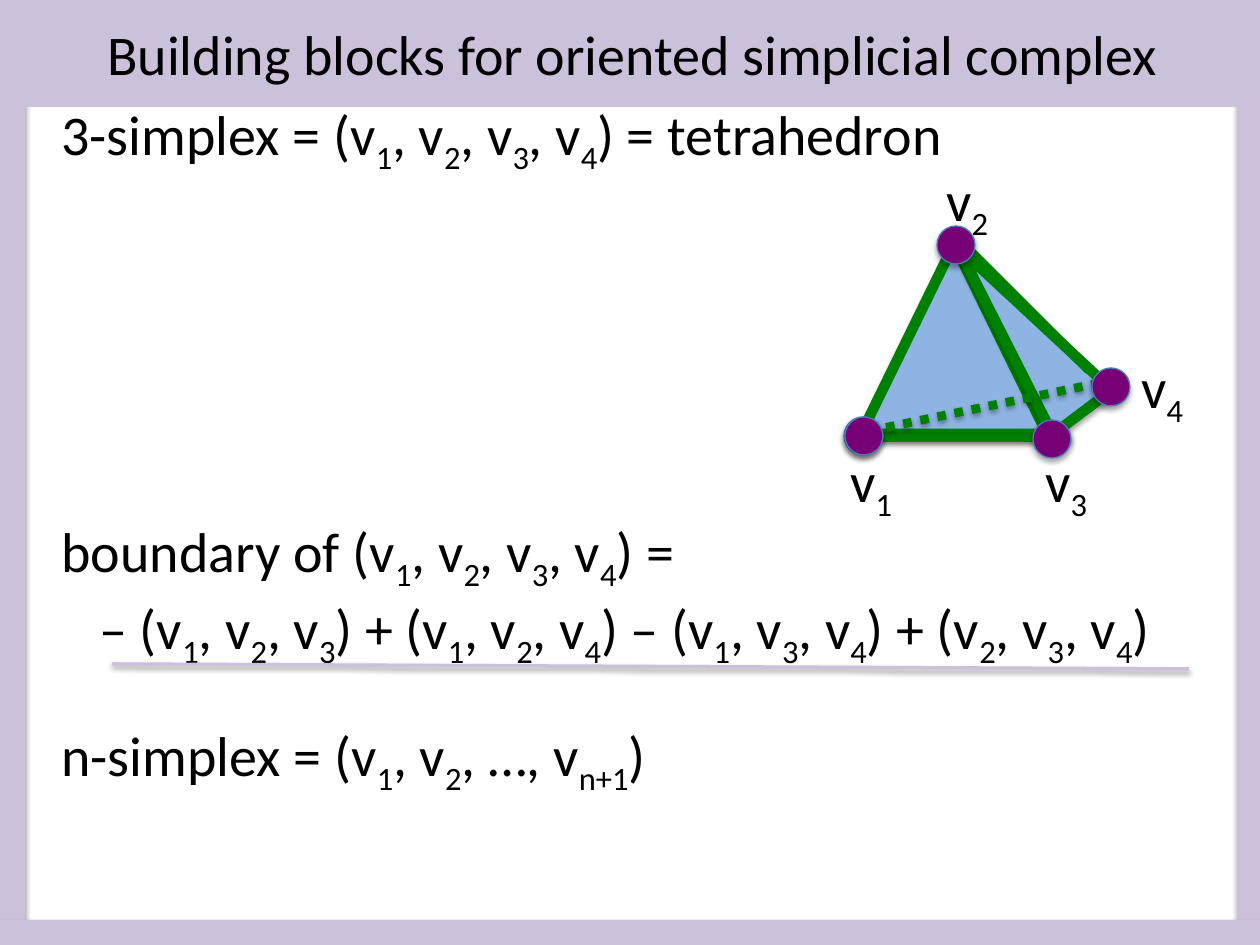
from dataclasses import dataclass
from typing import Optional

from lxml.etree import SubElement
from pptx import Presentation
from pptx.dml.color import RGBColor
from pptx.enum.dml import MSO_LINE_DASH_STYLE as Dash
from pptx.enum.shapes import MSO_CONNECTOR as Connector, MSO_SHAPE as Preset
from pptx.enum.text import MSO_ANCHOR as Anchor, MSO_AUTO_SIZE as AutoSize, PP_ALIGN as Align
from pptx.oxml.ns import qn
from pptx.util import Pt

EMU_PER_PX = 914400 / 126
BLACK = RGBColor(0x00, 0x00, 0x00)
LILAC = RGBColor(0xCC, 0xC1, 0xDA)
FACE_BLUE = RGBColor(0x8E, 0xB4, 0xE3)
EDGE_GREEN = RGBColor(0x00, 0x80, 0x00)
VERTEX_PURPLE = RGBColor(0x77, 0x00, 0x77)
VERTEX_RIM = RGBColor(0x4B, 0x7E, 0xBC)
FONT = "Calibri"
FONT_SIZE = 32
VERTEX_SIZE = 38
LABEL_SIZE = (89, 81)


@dataclass
class Block:
    """A filled preset shape, in px, with an optional outline in points."""
    box: tuple[int, int, int, int]
    fill: RGBColor
    preset: Preset = Preset.RECTANGLE
    rotation: int = 0
    outline: Optional[RGBColor] = None
    weight: float = 0
    shadow: bool = True


@dataclass
class Edge:
    """A straight line between two points in px."""
    start: tuple[int, int]
    end: tuple[int, int]
    weight: float
    color: RGBColor = EDGE_GREEN
    dash: Optional[Dash] = None
    shadow: bool = True


@dataclass
class Statement:
    """A line of text whose subscripts stand between underscores."""
    text: str
    space_before: int = 0
    indent: int = 0


def px(length: int) -> int:
    """Turn px into EMU."""
    return round(length * EMU_PER_PX)


def simplex(*indices: str) -> str:
    """Write an oriented simplex with subscripted vertices."""
    return "(" + ", ".join(f"v_{index}_" for index in indices) + ")"


def cast_shadow(effects, distance: float, opacity: int) -> None:
    """Add a soft downward shadow to an effect list."""
    outer = SubElement(effects, qn("a:outerShdw"), blurRad=str(Pt(3.1)), dist=str(Pt(distance)),
                       dir="5400000", rotWithShape="0")
    tone = SubElement(outer, qn("a:srgbClr"), val=str(BLACK))
    SubElement(tone, qn("a:alpha"), val=str(opacity * 1000))


def draw_block(slide, block: Block):
    """Draw a preset shape and return it."""
    shape = slide.shapes.add_shape(block.preset, *map(px, block.box))
    shape.rotation = block.rotation
    shape.fill.solid()
    shape.fill.fore_color.rgb = block.fill
    if block.outline is None:
        shape.line.fill.background()
    else:
        shape.line.color.rgb = block.outline
        shape.line.width = Pt(block.weight)
    shape.shadow.inherit = False
    if block.shadow:
        cast_shadow(shape._element.spPr.find(qn("a:effectLst")), 1.8, 35)
    return shape


def draw_edge(slide, edge: Edge) -> None:
    """Draw a straight connector."""
    connector = slide.shapes.add_connector(Connector.STRAIGHT, *map(px, edge.start + edge.end))
    connector.line.color.rgb = edge.color
    connector.line.width = Pt(edge.weight)
    if edge.dash is not None:
        connector.line.dash_style = edge.dash
    effects = SubElement(connector._element.spPr, qn("a:effectLst"))
    if edge.shadow:
        cast_shadow(effects, 1.6, 38)


def write_statement(paragraph, statement: Statement) -> None:
    """Fill a paragraph, lowering every second piece as a subscript."""
    paragraph.space_before = Pt(statement.space_before)
    if statement.indent:
        paragraph._p.get_or_add_pPr().set("marL", str(px(statement.indent)))
    for position, piece in enumerate(statement.text.split("_")):
        run = paragraph.add_run()
        run.text = piece
        run.font.name = FONT
        run.font.size = Pt(FONT_SIZE)
        run.font.color.rgb = BLACK
        if position % 2:
            run.font._element.set("baseline", "-25000")


def write_box(slide, box: tuple[int, int, int, int], statements: list[Statement]) -> None:
    """Add a text box holding one paragraph per statement."""
    frame = slide.shapes.add_textbox(*map(px, box)).text_frame
    frame.word_wrap = True
    frame.auto_size = AutoSize.SHAPE_TO_FIT_TEXT
    for position, statement in enumerate(statements):
        paragraph = frame.add_paragraph() if position else frame.paragraphs[0]
        write_statement(paragraph, statement)


FACES = [
    Block((861, 244, 186, 190), FACE_BLUE, Preset.ISOSCELES_TRIANGLE, 0, EDGE_GREEN, 6),
    Block((983, 226, 74, 207), FACE_BLUE, Preset.ISOSCELES_TRIANGLE, 323, EDGE_GREEN, 6),
]
EDGES = [
    Edge((963, 244), (1089, 370), 5.5, shadow=False),
    Edge((1071, 438), (879, 438), 5),
    Edge((869, 431), (1109, 381), 5, dash=Dash.ROUND_DOT),
]
VERTICES = [(1033, 420), (844, 417), (937, 226), (845, 417), (1092, 368)]
LABELS = {"4": (1129, 346), "3": (1033, 440), "1": (838, 440), "2": (934, 159)}
BOUNDARY = (f"– {simplex(*'123')} + {simplex(*'124')} – "
            f"{simplex(*'134')} + {simplex(*'234')}")
STATEMENTS = [
    Statement(f"3-simplex = {simplex(*'1234')} = tetrahedron"),
    Statement(f"boundary of {simplex(*'1234')} =", space_before=195),
    Statement(BOUNDARY, indent=38),
    Statement("n-simplex = (v_1_, v_2_, …, v_n+1_)", space_before=29),
]
DIVIDER = Edge((112, 664), (1189, 669), 2, LILAC)
BORDERS = [(0, 0, 25, 945), (1237, 0, 25, 945), (-1, 920, 1261, 25)]
HEADER = Block((3, 0, 1260, 107), LILAC, shadow=False)


def main() -> None:
    """Build the slide and save it."""
    deck = Presentation()
    deck.slide_width, deck.slide_height = px(1260), px(945)
    slide = deck.slides.add_slide(deck.slide_layouts[6])

    write_box(slide, (49, 93, 1187, 674), STATEMENTS)
    for face in FACES:
        draw_block(slide, face)
    for edge in EDGES:
        draw_edge(slide, edge)
    for corner in VERTICES:
        draw_block(slide, Block((*corner, VERTEX_SIZE, VERTEX_SIZE), VERTEX_PURPLE,
                                Preset.OVAL, 0, VERTEX_RIM, 0.75))
    for index, corner in LABELS.items():
        write_box(slide, (*corner, *LABEL_SIZE), [Statement(f"v_{index}_")])
    draw_edge(slide, DIVIDER)
    for border in BORDERS:
        draw_block(slide, Block(border, LILAC))

    header = draw_block(slide, HEADER).text_frame
    header.vertical_anchor = Anchor.MIDDLE
    title = header.paragraphs[0]
    title.alignment = Align.CENTER
    write_statement(title, Statement("Building blocks for oriented simplicial complex"))
    deck.save("out.pptx")


if __name__ == "__main__":
    main()
